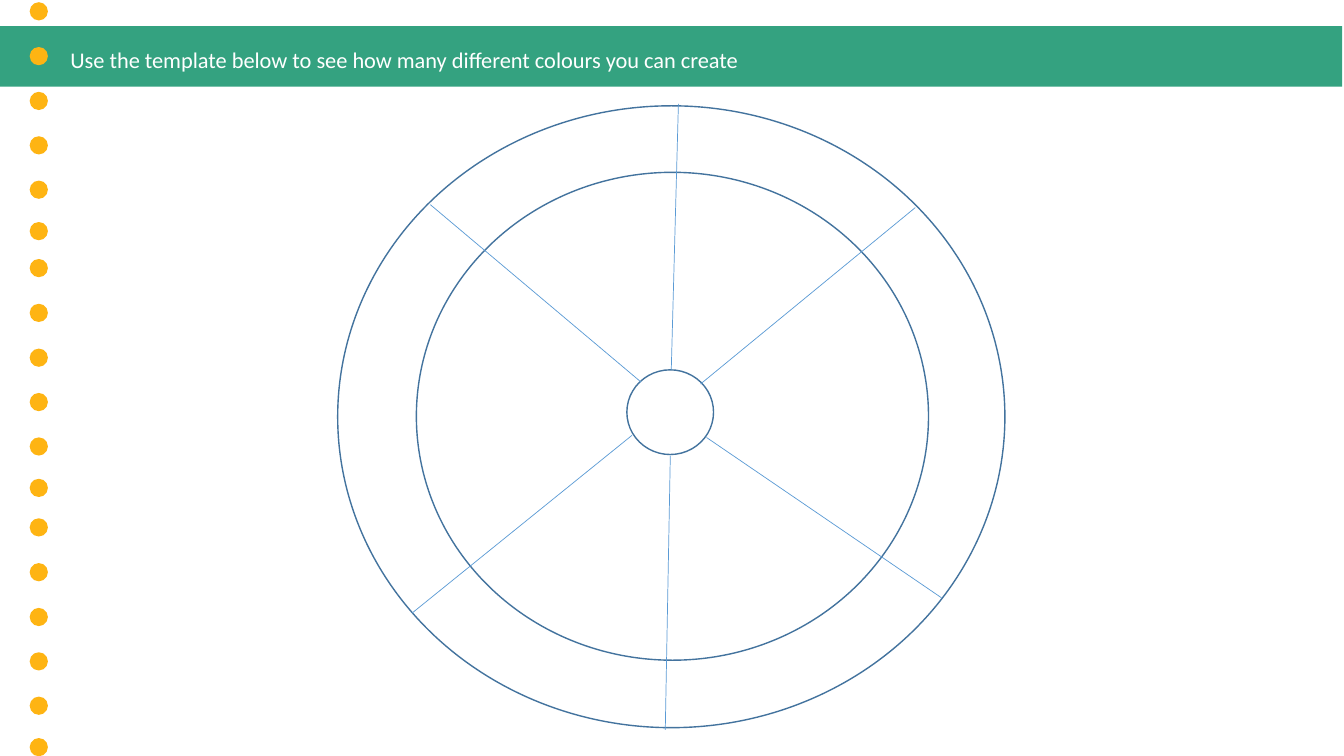
from lxml import etree
from pptx import Presentation
from pptx.dml.color import RGBColor
from pptx.enum.shapes import MSO_CONNECTOR, MSO_SHAPE
from pptx.enum.text import MSO_AUTO_SIZE
from pptx.oxml.ns import qn
from pptx.util import Pt

RECT, OVAL = MSO_SHAPE.RECTANGLE, MSO_SHAPE.OVAL
STRAIGHT = MSO_CONNECTOR.STRAIGHT
FIT_SHAPE = MSO_AUTO_SIZE.SHAPE_TO_FIT_TEXT

GREEN, YELLOW, WHITE = "34A280", "FEB413", "FFFFFF"
RING_BLUE, SPOKE_BLUE = "43739E", "5B9BD5"

# left, top, width, height
RINGS = [
    (241.2, 75.6, 476.6, 444.2),
    (297.4, 123.1, 365.8, 348.5),
    (447.8, 264.2, 61.9, 60.5),
]
# x and y at the hub, x and y at the rim
SPOKES = [
    (479.5, 264.2, 484.6, 74.2),
    (478.8, 325.4, 475.2, 521.3),
    (457.9, 272.9, 307.4, 146.2),
    (500.4, 274.3, 653.8, 148.3),
    (451.4, 311, 294.5, 437.8),
    (504.7, 312.5, 672.5, 427),
]
DOT_LEFT, DOT_SIZE = 21.2, 13
DOT_GROUP_TOPS = [1.6, 185, 370.2]
DOT_OFFSETS = [0, 32, 64, 95.7, 127.4, 157]


def color(hex_string):
    return RGBColor.from_string(hex_string)


def add_filled(shapes, kind, left, top, width, height, fill):
    s = shapes.add_shape(kind, Pt(left), Pt(top), Pt(width), Pt(height))
    s.shadow.inherit = False
    s.fill.solid()
    s.fill.fore_color.rgb = color(fill)
    s.line.fill.background()


def add_ring(shapes, left, top, width, height):
    s = shapes.add_shape(OVAL, Pt(left), Pt(top), Pt(width), Pt(height))
    s.shadow.inherit = False
    s.fill.background()
    s.line.color.rgb = color(RING_BLUE)
    s.line.width = Pt(1)


def add_spoke(shapes, x1, y1, x2, y2):
    s = shapes.add_connector(STRAIGHT, Pt(x1), Pt(y1), Pt(x2), Pt(y2))
    s.line.color.rgb = color(SPOKE_BLUE)
    s.line.width = Pt(0.5)
    etree.SubElement(s._element.spPr, qn("a:effectLst"))


def add_heading(shapes, text, left, top, width, height):
    s = shapes.add_textbox(Pt(left), Pt(top), Pt(width), Pt(height))
    tf = s.text_frame
    tf.word_wrap = True
    tf.auto_size = FIT_SHAPE
    p = tf.paragraphs[0]
    p.text = text
    p.line_spacing = 1.07
    p.space_after = Pt(8)
    p.font.name = "Calibri"
    p.font.size = Pt(16)
    p.font.color.rgb = color(WHITE)


def add_dots(shapes):
    """Draw the left-hand column of dots, one group per repeat of the spacing."""
    for group_top in DOT_GROUP_TOPS:
        group = shapes.add_group_shape()
        for offset in DOT_OFFSETS:
            add_filled(group.shapes, OVAL, DOT_LEFT, group_top + offset,
                       DOT_SIZE, DOT_SIZE, YELLOW)


def main():
    prs = Presentation()
    prs.slide_width, prs.slide_height = Pt(960), Pt(540)
    shapes = prs.slides.add_slide(prs.slide_layouts[6]).shapes

    add_filled(shapes, RECT, -1.4, 18.7, 960, 43.2, GREEN)
    # The banner starts slightly left of the slide, so the sliver is covered.
    for ring in RINGS:
        add_ring(shapes, *ring)
    for spoke in SPOKES:
        add_spoke(shapes, *spoke)
    add_heading(
        shapes,
        "Use the template below to see how many different colours you can create",
        43.2, 28.1, 619.2, 28.1)
    add_dots(shapes)
    prs.save("out.pptx")


if __name__ == "__main__":
    main()
